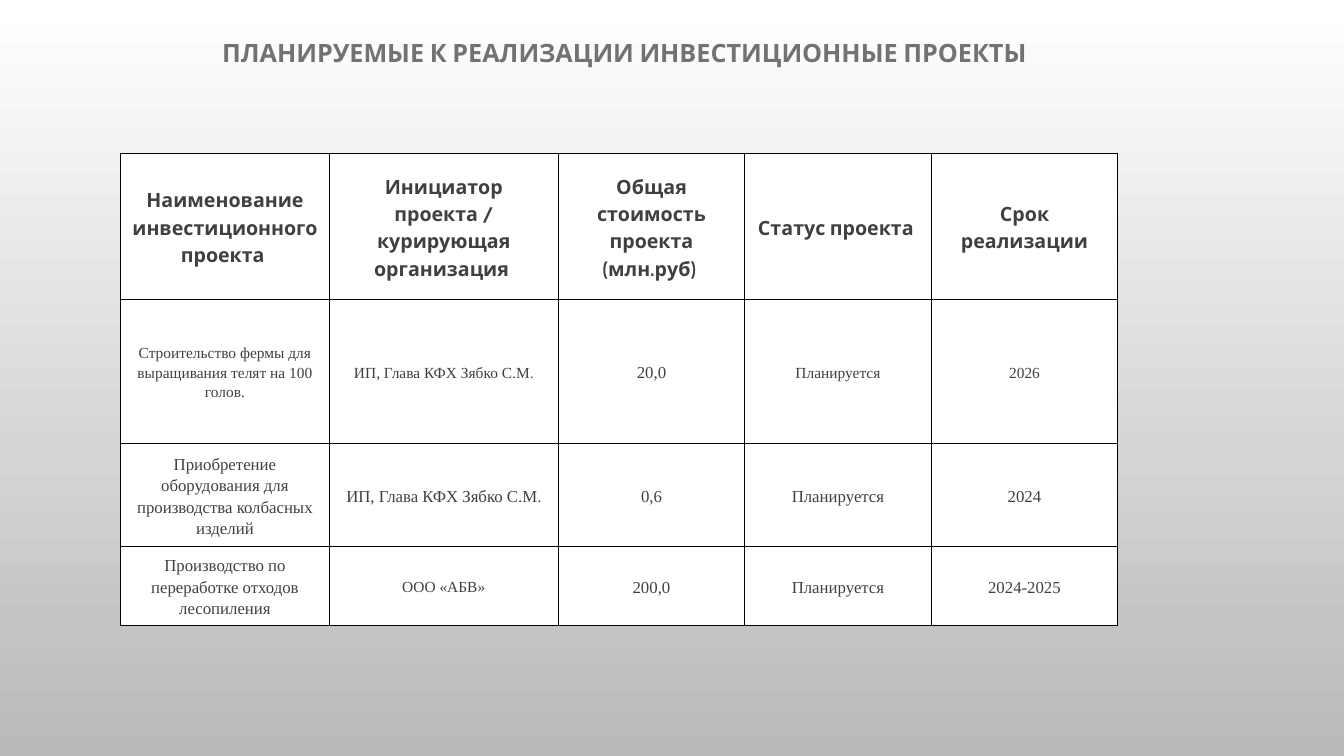
from lxml.etree import SubElement
from pptx import Presentation
from pptx.dml.color import RGBColor
from pptx.enum.text import MSO_ANCHOR as Anchor, PP_ALIGN as Align
from pptx.oxml.ns import qn
from pptx.util import Cm, Pt

WHITE = RGBColor(0xFF, 0xFF, 0xFF)
BACKGROUND_END = RGBColor(0xB9, 0xB9, 0xB9)
TITLE_GREY = RGBColor(0x72, 0x72, 0x71)
TEXT_GREY = RGBColor(0x40, 0x40, 0x40)
BLACK = RGBColor(0, 0, 0)
HEADING_FONT = "Cabin"
BODY_FONT = "Times New Roman"

COLUMN_WIDTHS = [5.26, 5.77, 4.7, 4.7, 4.7]
ROW_HEIGHTS = [3.69, 3.63, 2.6, 1.99]
HEADERS = [
    "Наименование инвестиционного проекта ",
    "Инициатор проекта / курирующая организация ",
    "Общая стоимость проекта (млн.руб) ",
    "Статус проекта ",
    "Срок реализации",
]
# Each cell is a list of (text, size) runs.
PROJECTS = [
    [
        [("Строительство фермы для выращивания телят на 100 голов.", 11)],
        [("ИП, Глава КФХ Зябко С.М", 11), (".", 10.5)],
        [("20,0", 12)],
        [("Планируется", 11)],
        [("2026", 11)],
    ],
    [
        [("Приобретение оборудования для производства колбасных изделий", 12)],
        [("ИП, Глава КФХ Зябко С.М", 12), (".", 11)],
        [("0,6", 12)],
        [("Планируется", 12)],
        [("2024", 12)],
    ],
    [
        [("Производство по переработке отходов лесопиления", 12)],
        [("ООО «АБВ»", 11)],
        [("200,0", 12)],
        [("Планируется", 12)],
        [("2024-2025", 12)],
    ],
]


def add_text(paragraph, text, *, size, font, color, bold=False, spacing=1.15):
    paragraph.alignment = Align.CENTER
    paragraph.line_spacing = spacing
    run = paragraph.add_run()
    run.text = text
    run.font.size = Pt(size)
    run.font.name = font
    run.font.bold = bold
    run.font.color.rgb = color


def set_borders(cell):
    properties = cell._tc.get_or_add_tcPr()
    for position, side in enumerate(("a:lnL", "a:lnR", "a:lnT", "a:lnB")):
        line = properties.makeelement(qn(side), {"w": str(Pt(1))})
        fill = SubElement(line, qn("a:solidFill"))
        SubElement(fill, qn("a:srgbClr"), val=str(BLACK))
        properties.insert(position, line)


def paint_background(slide):
    fill = slide.background.fill
    fill.gradient()
    fill.gradient_angle = 270
    for stop, color, position in zip(fill.gradient_stops, (WHITE, BACKGROUND_END), (0, 1)):
        stop.color.rgb = color
        stop.position = position


def add_title(slide, left, top, width, height):
    frame = slide.shapes.add_textbox(left, top, width, height).text_frame
    frame.word_wrap = True
    frame.vertical_anchor = Anchor.MIDDLE
    add_text(frame.paragraphs[0], "ПЛАНИРУЕМЫЕ К РЕАЛИЗАЦИИ ИНВЕСТИЦИОННЫЕ ПРОЕКТЫ",
             size=18, font=HEADING_FONT, color=TITLE_GREY, bold=True, spacing=0.9)


def add_projects_table(slide, left, top, width, height):
    """Place the table, sharing the box among columns and rows in proportion."""
    rows = [[[(header, 14)] for header in HEADERS]] + PROJECTS
    table = slide.shapes.add_table(len(rows), len(HEADERS), left, top, width, height).table
    for column, share in zip(table.columns, COLUMN_WIDTHS):
        column.width = int(width * share / sum(COLUMN_WIDTHS))
    for row, share in zip(table.rows, ROW_HEIGHTS):
        row.height = int(height * share / sum(ROW_HEIGHTS))
    for row_index, row in enumerate(rows):
        is_header = row_index == 0
        for column_index, runs in enumerate(row):
            cell = table.cell(row_index, column_index)
            cell.fill.solid()
            cell.fill.fore_color.rgb = WHITE
            cell.vertical_anchor = Anchor.MIDDLE
            cell.margin_left = cell.margin_right = Cm(0.18)
            cell.margin_top = cell.margin_bottom = Cm(0.1)
            set_borders(cell)
            for text, size in runs:
                add_text(cell.text_frame.paragraphs[0], text, size=size, color=TEXT_GREY,
                         font=HEADING_FONT if is_header else BODY_FONT, bold=is_header)


def main():
    presentation = Presentation()
    presentation.slide_width = Cm(33.87)
    presentation.slide_height = Cm(19.05)
    slide = presentation.slides.add_slide(presentation.slide_layouts[6])
    paint_background(slide)
    add_title(slide, Cm(1.14), Cm(0.9), Cm(29.2), Cm(0.95))
    add_projects_table(slide, Cm(3.04), Cm(3.86), Cm(25.13), Cm(11.91))
    presentation.save("out.pptx")


if __name__ == "__main__":
    main()
